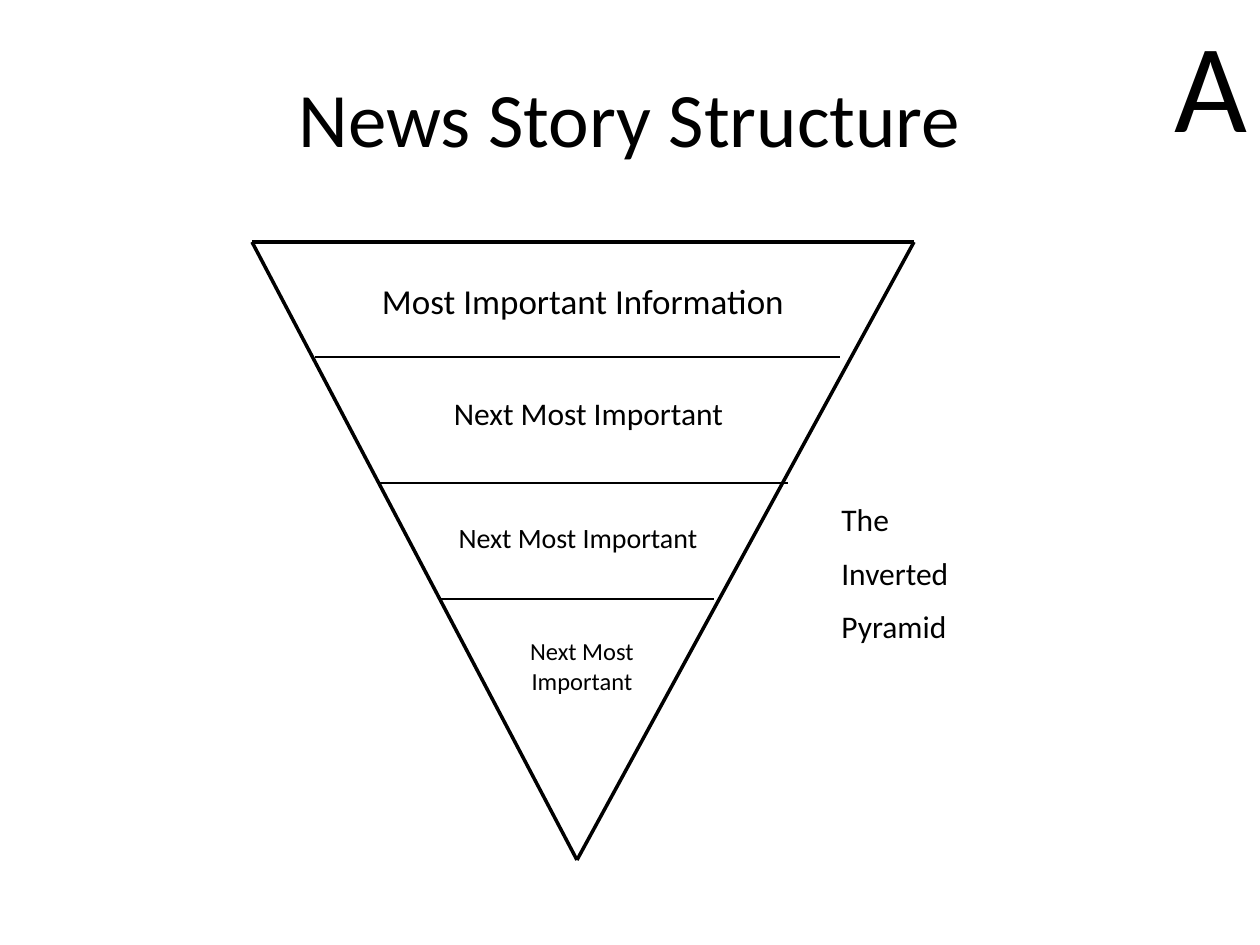
from pptx import Presentation
from pptx.dml.color import RGBColor
from pptx.enum import shapes, text
from pptx.oxml.ns import qn
from pptx.util import Pt
from lxml import etree

PX = 914400 / 126  # EMU in one px
BLACK = RGBColor(0, 0, 0)
LEFT, MID = text.PP_ALIGN.LEFT, text.PP_ALIGN.CENTER


def emu(*px):
    return [round(n * PX) for n in px]


def write(frame, words, size=18, align=MID, gap=0, font="Calibri", color=BLACK):
    """Fill a frame, one paragraph a line, with a gap between lines."""
    for i, line in enumerate(words.split("\n")):
        para = frame.add_paragraph() if i else frame.paragraphs[0]
        para.alignment = align
        para.space_before = Pt(gap if i else 0)
        run = para.add_run()
        run.text = line
        run.font.name, run.font.size = font, Pt(size)
        run.font.color.rgb = color


class Deck:
    def __init__(self, wide, high):
        self.prs = Presentation()
        self.prs.slide_width, self.prs.slide_height = emu(wide, high)
        self.slide = self.prs.slides.add_slide(self.prs.slide_layouts[6])

    def label(self, box, words, wrap=True, anchor=text.MSO_ANCHOR.TOP, **style):
        frame = self.slide.shapes.add_textbox(*emu(*box)).text_frame
        frame.word_wrap = wrap
        frame.vertical_anchor = anchor
        write(frame, words, **style)

    def line(self, start, end, width):
        link = self.slide.shapes.add_connector(
            shapes.MSO_CONNECTOR.STRAIGHT, *emu(*start, *end))
        link.line.color.rgb = BLACK
        link.line.width = Pt(width)
        etree.SubElement(link._element.spPr, qn("a:effectLst"))


def main():
    deck = Deck(1260, 945)

    # Title
    deck.label((63, 38, 1134, 158), "News Story Structure", size=44,
               anchor=text.MSO_ANCHOR.MIDDLE)

    # Inverted pyramid
    left, right, tip = (252, 242), (914, 242), (577, 860)
    for start, end in ((left, tip), (left, right), (right, tip)):
        deck.line(start, end, 2)

    # Dividers between the tiers
    for x, end, y in ((315, 840, 357), (378, 788, 483), (441, 714, 599)):
        deck.line((x, y), (end, y), 0.75)

    # Tiers, from most to least important
    tiers = (
        ((336, 273, 494, 54), "Most Important Information"),
        ((410, 388, 357, 50), "Next Most Important"),
        ((431, 514, 294, 47), "Next Most Important"),
        ((514, 630, 136, 72), "Next Most Important"),
    )
    for i, (box, words) in enumerate(tiers):
        deck.label(box, words, size=20 - 2 * i)

    # Side caption and corner letter
    deck.label((829, 494, 315, 214), "The\nInverted\nPyramid", align=LEFT, gap=9)
    deck.label((1162, 0, 99, 165), "A", wrap=False, size=72, align=LEFT)

    deck.prs.save("out.pptx")


if __name__ == "__main__":
    main()
